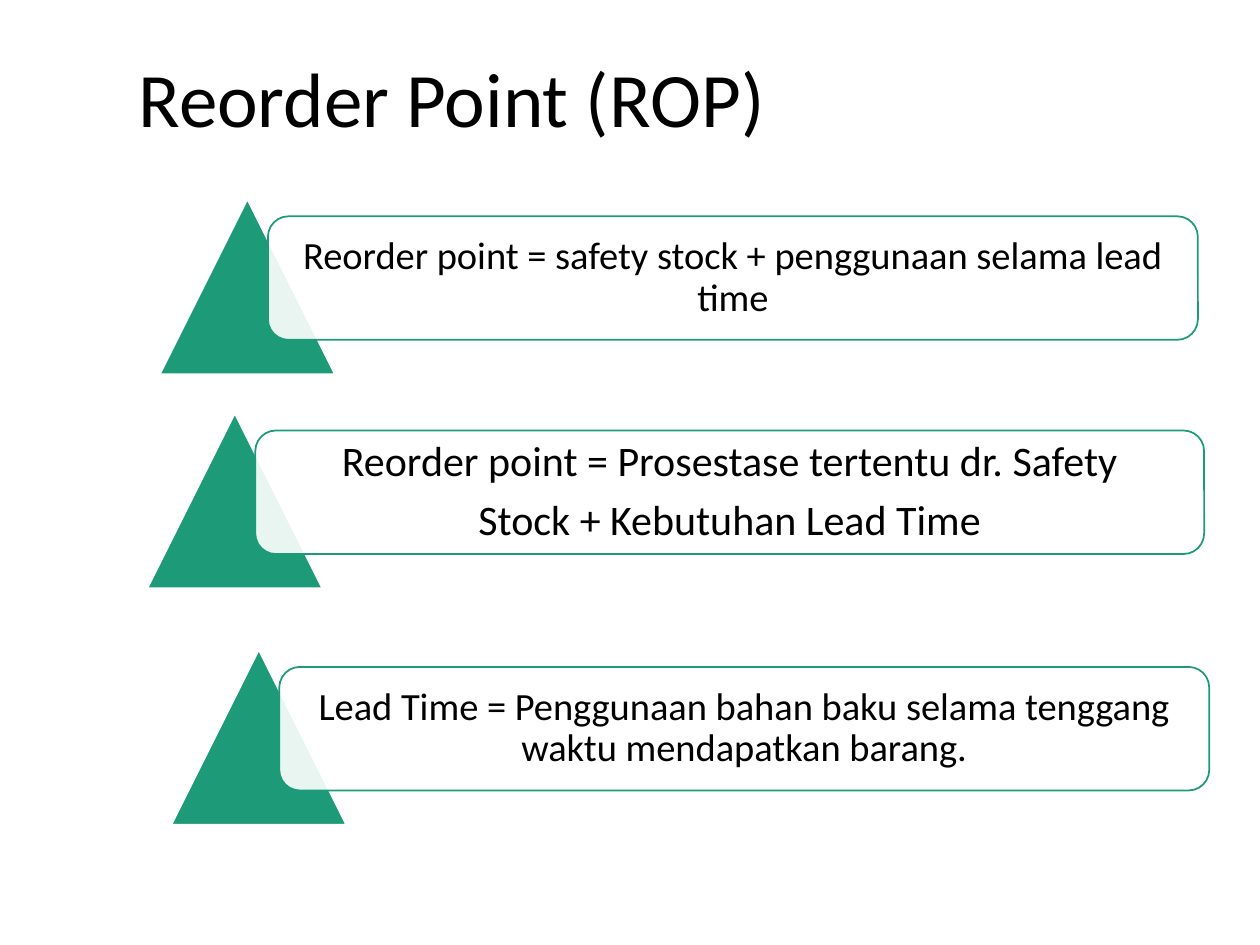
"""Build the Reorder Point (ROP) slide."""
import pptx
import pptx.dml.color
import pptx.enum.shapes
import pptx.enum.text
import pptx.oxml
import pptx.oxml.ns
import pptx.util

Pt = pptx.util.Pt
SHAPE = pptx.enum.shapes.MSO_SHAPE
ALIGN = pptx.enum.text.PP_ALIGN
ANCHOR = pptx.enum.text.MSO_ANCHOR

GREEN = pptx.dml.color.RGBColor(0x1D, 0x9A, 0x78)
WHITE = pptx.dml.color.RGBColor(0xFF, 0xFF, 0xFF)
BLACK = pptx.dml.color.RGBColor(0x00, 0x00, 0x00)

TRIANGLE_SIZE = 100
BOX_HEIGHT = 70.6
BOX_DX, BOX_DY = 61.7, 9.8

ROWS = [
    (91.4, 113.8, 531.4, 22,
     ["Reorder point = safety stock + penggunaan selama lead time"]),
    (84.2, 236.2, 542.2, 24,
     ["Reorder point = Prosestase tertentu dr. Safety",
      "Stock + Kebutuhan Lead Time"]),
    (97.9, 371.3, 531.4, 22,
     ["Lead Time = Penggunaan bahan baku selama tenggang waktu mendapatkan barang."]),
]


class Deck:
    """Hold the text style and the current slide."""

    font = "Calibri"
    line_spacing = 0.9

    def __init__(self, prs):
        """Add a title-only slide."""
        self.s = prs.slides.add_slide(prs.slide_layouts[5])

    def set_text(self, tf, lines, size, align):
        """Fill a text frame with one paragraph per line."""
        tf.word_wrap = True
        tf.vertical_anchor = ANCHOR.MIDDLE
        tf.text = "\n".join(lines)
        for p in tf.paragraphs:
            p.alignment = align
            p.line_spacing = self.line_spacing
            p.font.name = self.font
            p.font.size = Pt(size)
            p.font.color.rgb = BLACK

    def title(self, text, x, y, w, h):
        """Place and format the title placeholder."""
        sp = self.s.shapes.title
        sp.left, sp.top, sp.width, sp.height = Pt(x), Pt(y), Pt(w), Pt(h)
        self.set_text(sp.text_frame, [text], 44, ALIGN.LEFT)

    def shape(self, kind, x, y, w, h, fill, line):
        """Add a filled and outlined preset shape."""
        sp = self.s.shapes.add_shape(kind, Pt(x), Pt(y), Pt(w), Pt(h))
        sp.shadow.inherit = False
        sp.fill.solid()
        sp.fill.fore_color.rgb = fill
        sp.line.color.rgb = line
        sp.line.width = Pt(1)
        return sp

    def triangle(self, x, y):
        """Add a green marker triangle."""
        self.shape(SHAPE.ISOSCELES_TRIANGLE, x, y, TRIANGLE_SIZE, TRIANGLE_SIZE, GREEN, WHITE)

    def box(self, x, y, w, lines, size):
        """Add a translucent rounded box with centred text."""
        sp = self.shape(SHAPE.ROUNDED_RECTANGLE, x, y, w, BOX_HEIGHT, WHITE, GREEN)
        color = sp._element.spPr.find("/".join(map(pptx.oxml.ns.qn, ("a:solidFill", "a:srgbClr"))))
        color.append(pptx.oxml.parse_xml(
            f'<a:alpha {pptx.oxml.ns.nsdecls("a")} val="90000"/>'))
        tf = sp.text_frame
        tf.margin_left = tf.margin_right = tf.margin_top = tf.margin_bottom = Pt(10)
        self.set_text(tf, lines, size, ALIGN.CENTER)
        for p in tf.paragraphs:
            p.space_after = Pt(8)


def main():
    """Build and save the slide."""
    prs = pptx.Presentation()
    prs.slide_width, prs.slide_height = Pt(720), Pt(540)
    deck = Deck(prs)
    deck.title("Reorder Point (ROP)", 72, 21.6, 612, 74.2)
    for x, y, w, size, lines in ROWS:
        deck.triangle(x, y)
        deck.box(x + BOX_DX, y + BOX_DY, w, lines, size)
    prs.save("out.pptx")


if __name__ == "__main__":
    main()
